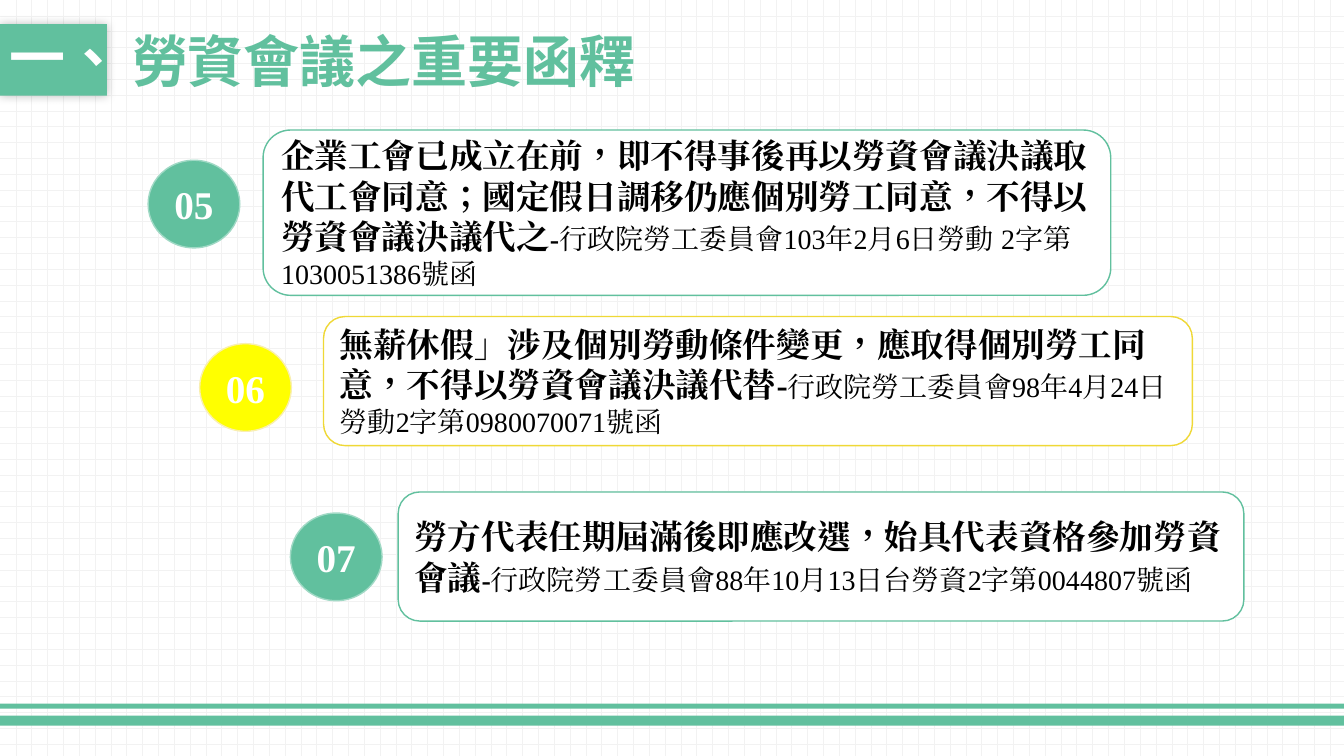
import pptx
import pptx.util
import pptx.dml.color
import pptx.enum.dml
import pptx.enum.shapes
import pptx.enum.text
import pptx.oxml
import pptx.oxml.ns

Pt = pptx.util.Pt
SHAPE = pptx.enum.shapes.MSO_SHAPE
ALIGN = pptx.enum.text.PP_ALIGN
GREEN, PALE_GREEN = "61C09E", "A0D9C5"
YELLOW, PALE_YELLOW, GOLD = "FFFF00", "F9EFAF", "EFD836"
WHITE, BLACK = "FFFFFF", "000000"
HEADING_FONT, BODY_FONT = "Noto Sans CJK SC", "Times New Roman"
WIDTH, HEIGHT = 960, 540

# number, circle left and top, card left, top, width and height, bold ruling, dash size and weight, source
RULINGS = [
    ("05", (105.8, 114.5), (187.9, 92.9, 605.5, 118.1),
     "企業工會已成立在前，即不得事後再以勞資會議決議取代工會同意；國定假日調移仍應個別勞工同意，不得以勞資會議決議代之",
     20, "行政院勞工委員會103年2月6日勞動 2字第 1030051386號函", (GREEN, PALE_GREEN, GREEN)),
    ("06", (142.6, 245.5), (231.1, 226.1, 620.6, 92.2),
     "無薪休假」涉及個別勞動條件變更，應取得個別勞工同意，不得以勞資會議決議代替",
     24, "行政院勞工委員會98年4月24日勞動2字第0980070071號函", (YELLOW, PALE_YELLOW, GOLD)),
    ("07", (207.4, 366.5), (284.4, 351.4, 604.1, 92.2),
     "勞方代表任期屆滿後即應改選，始具代表資格參加勞資會議",
     20, "行政院勞工委員會88年10月13日台勞資2字第0044807號函", (GREEN, PALE_GREEN, GREEN)),
]


def color(hex_string):
    return pptx.dml.color.RGBColor.from_string(hex_string)


def add_text(paragraph, text, size=24, bold=True, font=BODY_FONT, fill=BLACK):
    run = paragraph.add_run()
    run.text = text
    run.font.size = Pt(size)
    run.font.bold = bold
    run.font.name = font
    run.font.color.rgb = color(fill)
    properties = run._r.get_or_add_rPr()
    properties.set("lang", "zh-TW")
    east_asian = pptx.oxml.parse_xml(
        f'<a:ea {pptx.oxml.ns.nsdecls("a")} typeface="{font}"/>')
    properties.find(pptx.oxml.ns.qn("a:latin")).addnext(east_asian)


class SlideBuilder:
    def __init__(self, presentation):
        self.slide = presentation.slides.add_slide(presentation.slide_layouts[5])
        fill = self.slide.background.fill
        fill.patterned()
        fill.pattern = pptx.enum.dml.MSO_PATTERN.DOTTED_GRID
        fill.fore_color.rgb = color("F2F2F2")
        fill.back_color.rgb = color(WHITE)

    def shape(self, kind, left, top, width, height, fill, line=None):
        shape = self.slide.shapes.add_shape(kind, Pt(left), Pt(top), Pt(width), Pt(height))
        shape.shadow.inherit = False
        shape.fill.solid()
        shape.fill.fore_color.rgb = color(fill)
        if line:
            shape.line.color.rgb = color(line)
            shape.line.width = Pt(1)
        else:
            shape.line.fill.background()
        return shape

    def paragraph(self, shape, align=ALIGN.LEFT, wrap=True):
        """Prepare the text frame and return its first paragraph."""
        frame = shape.text_frame
        frame.word_wrap = wrap
        frame.auto_size = pptx.enum.text.MSO_AUTO_SIZE.NONE
        frame.vertical_anchor = pptx.enum.text.MSO_ANCHOR.MIDDLE
        frame.paragraphs[0].alignment = align
        return frame.paragraphs[0]

    def title(self, text):
        title = self.slide.shapes.title
        title.left, title.top, title.width, title.height = Pt(87.1), Pt(17.3), Pt(506.9), Pt(51.1)
        paragraph = self.paragraph(title)
        paragraph.space_before = Pt(10)
        add_text(paragraph, text, size=40, font=HEADING_FONT, fill=GREEN)

    def section_tag(self, text):
        tag = self.shape(SHAPE.RECTANGLE, 0, 17.3, 76.3, 51.1, GREEN)
        effects = tag._element.spPr.find(pptx.oxml.ns.qn("a:effectLst"))
        effects.append(pptx.oxml.parse_xml(
            f'<a:outerShdw {pptx.oxml.ns.nsdecls("a")} blurRad="{Pt(7)}" dist="0" dir="0">'
            f'<a:srgbClr val="{BLACK}"><a:alpha val="25000"/></a:srgbClr></a:outerShdw>'))
        paragraph = self.paragraph(tag, wrap=False)
        paragraph.line_spacing = 0.9
        paragraph.space_before = Pt(10)
        add_text(paragraph, text, size=40, font=HEADING_FONT, fill=WHITE)

    def number_circle(self, number, left, top, fill, line):
        circle = self.shape(SHAPE.OVAL, left, top, 65.5, 62.6, fill, line)
        add_text(self.paragraph(circle, ALIGN.CENTER), number, size=28, fill=WHITE)

    def ruling_card(self, box, ruling, dash_size, source, line):
        card = self.shape(SHAPE.ROUNDED_RECTANGLE, *box, WHITE, line)
        paragraph = self.paragraph(card)
        add_text(paragraph, ruling)
        add_text(paragraph, "-", size=dash_size)
        add_text(paragraph, source, size=20, bold=False)


def main():
    presentation = pptx.Presentation()
    presentation.slide_width, presentation.slide_height = Pt(WIDTH), Pt(HEIGHT)
    builder = SlideBuilder(presentation)
    for top, height in ((511.2, 7.2), (502.6, 3.6)):
        builder.shape(SHAPE.RECTANGLE, 0, top, WIDTH, height, GREEN)
    builder.section_tag("一、")
    builder.title("勞資會議之重要函釋")
    for number, circle, box, ruling, dash_size, source, (fill, rim, border) in RULINGS:
        builder.number_circle(number, *circle, fill, rim)
        builder.ruling_card(box, ruling, dash_size, source, border)
    presentation.save("out.pptx")


if __name__ == "__main__":
    main()
